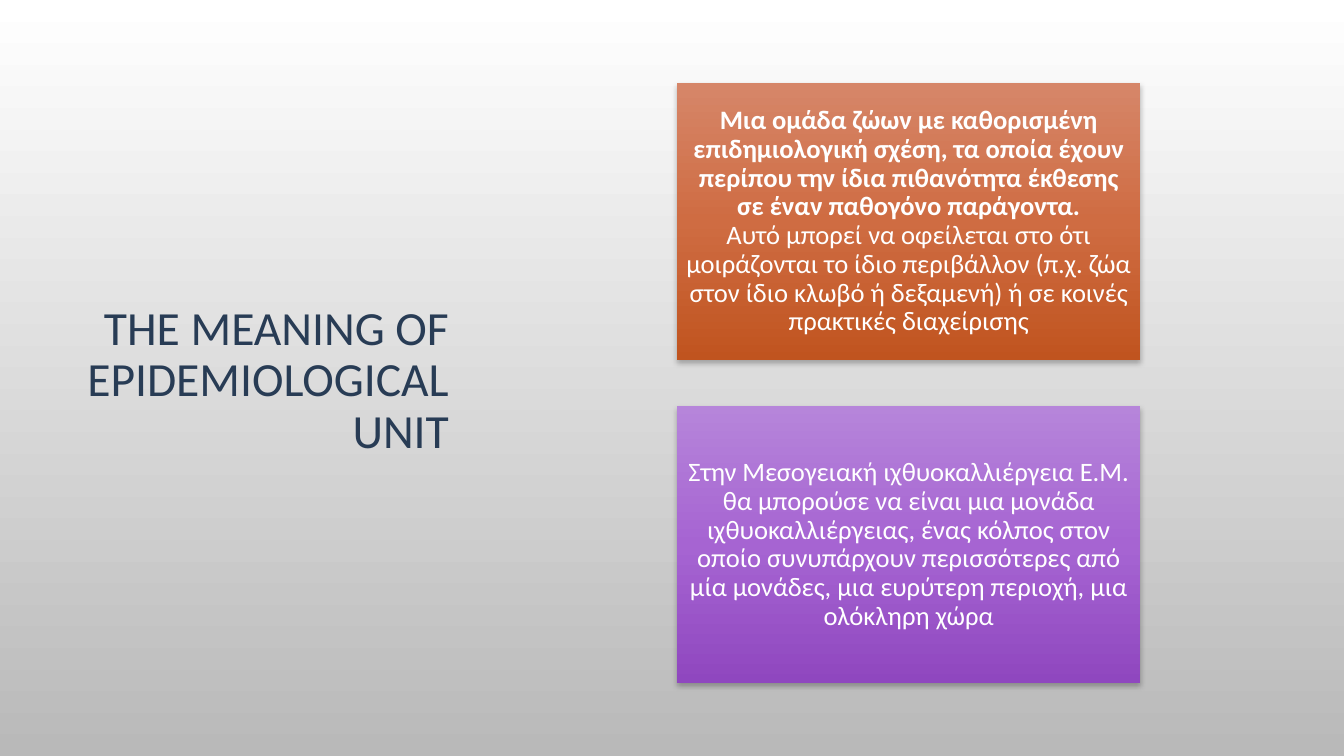
from copy import deepcopy
from dataclasses import dataclass

from lxml import etree
from pptx import Presentation
from pptx import util as u
from pptx.dml.color import RGBColor
from pptx.enum import shapes, text
from pptx.oxml.ns import nsdecls, qn

PX = 9525
WHITE = RGBColor(0xFF, 0xFF, 0xFF)
NAVY = RGBColor(0x28, 0x3C, 0x55)
GREY = RGBColor(0xB9, 0xB9, 0xB9)
RUST = (RGBColor(0xD6, 0x86, 0x69), RGBColor(0xCF, 0x6C, 0x42), RGBColor(0xC0, 0x54, 0x1F))
PLUM = (RGBColor(0xB6, 0x85, 0xDA), RGBColor(0xA6, 0x64, 0xD2), RGBColor(0x8F, 0x47, 0xBF))

LEFT, TOP, WIDE, HIGH, STEP = 645, 79, 441, 264, 308
SHADOW = (
    f'<a:effectLst {nsdecls("a")}>'
    '<a:outerShdw blurRad="50800" dist="25400" dir="5400000" rotWithShape="0">'
    '<a:srgbClr val="000000"><a:alpha val="28000"/></a:srgbClr>'
    '</a:outerShdw></a:effectLst>'
)


@dataclass
class Card:
    tones: tuple[RGBColor, ...]
    body: str
    lead: str = ""


CARDS = [
    Card(
        RUST,
        "Αυτό μπορεί να οφείλεται στο ότι μοιράζονται το ίδιο περιβάλλον "
        "(π.χ. ζώα στον ίδιο κλωβό ή δεξαμενή) ή σε κοινές πρακτικές διαχείρισης",
        "Μια ομάδα ζώων με καθορισμένη επιδημιολογική σχέση, τα οποία έχουν "
        "περίπου την ίδια πιθανότητα έκθεσης σε έναν παθογόνο παράγοντα.",
    ),
    Card(
        PLUM,
        "Στην Μεσογειακή ιχθυοκαλλιέργεια Ε.Μ. θα μπορούσε να είναι μια μονάδα "
        "ιχθυοκαλλιέργειας, ένας κόλπος στον οποίο συνυπάρχουν περισσότερες από "
        "μία μονάδες, μια ευρύτερη περιοχή, μια ολόκληρη χώρα",
    ),
]


def box(*sides: int) -> list[u.Emu]:
    return [u.Emu(side * PX) for side in sides]


def shade(fill, owner, tones: tuple[RGBColor, ...]) -> None:
    """Fill the owner from top to bottom with evenly spaced tones."""
    fill.gradient()
    fill.gradient_angle = 270
    stops = next(owner.iter(qn("a:gsLst")))
    while len(stops) < len(tones):
        stops.append(deepcopy(stops[-1]))
    for i, (stop, tone) in enumerate(zip(fill.gradient_stops, tones)):
        stop.position = i / (len(tones) - 1)
        stop.color.rgb = tone


def style(para, size: int, tone: RGBColor, align) -> None:
    para.alignment = align
    para.line_spacing = 0.9
    para.font.name = "Calibri"
    para.font.size = u.Pt(size)
    para.font.color.rgb = tone


def add_title(slide) -> None:
    frame = slide.shapes.add_textbox(*box(57, 285, 380, 252)).text_frame
    frame.word_wrap = True
    para = frame.paragraphs[0]
    para.text = "THE MEANING OF EPIDEMIOLOGICAL UNIT"
    style(para, 34, NAVY, text.PP_ALIGN.RIGHT)


def add_card(slide, card: Card, top: int) -> None:
    shape = slide.shapes.add_shape(shapes.MSO_SHAPE.RECTANGLE, *box(LEFT, top, WIDE, HIGH))
    shade(shape.fill, shape.element.spPr, card.tones)
    shape.line.fill.background()
    shape.element.spPr.append(etree.fromstring(SHADOW))

    frame = shape.text_frame
    frame.word_wrap = True
    frame.vertical_anchor = text.MSO_ANCHOR.MIDDLE
    pad = u.Emu(8 * PX)
    frame.margin_left = frame.margin_right = pad
    frame.margin_top = frame.margin_bottom = pad
    para = frame.paragraphs[0]
    style(para, 19, WHITE, text.PP_ALIGN.CENTER)
    if card.lead:
        lead = para.add_run()
        lead.text = card.lead
        lead.font.bold = True
        para.add_line_break()
    para.add_run().text = card.body


def main() -> None:
    deck = Presentation()
    deck.slide_width, deck.slide_height = box(1280, 720)
    slide = deck.slides.add_slide(deck.slide_layouts[6])
    shade(slide.background.fill, slide.element, (WHITE, GREY))
    add_title(slide)
    for i, card in enumerate(CARDS):
        add_card(slide, card, TOP + i * STEP)
    deck.save("out.pptx")


if __name__ == "__main__":
    main()
